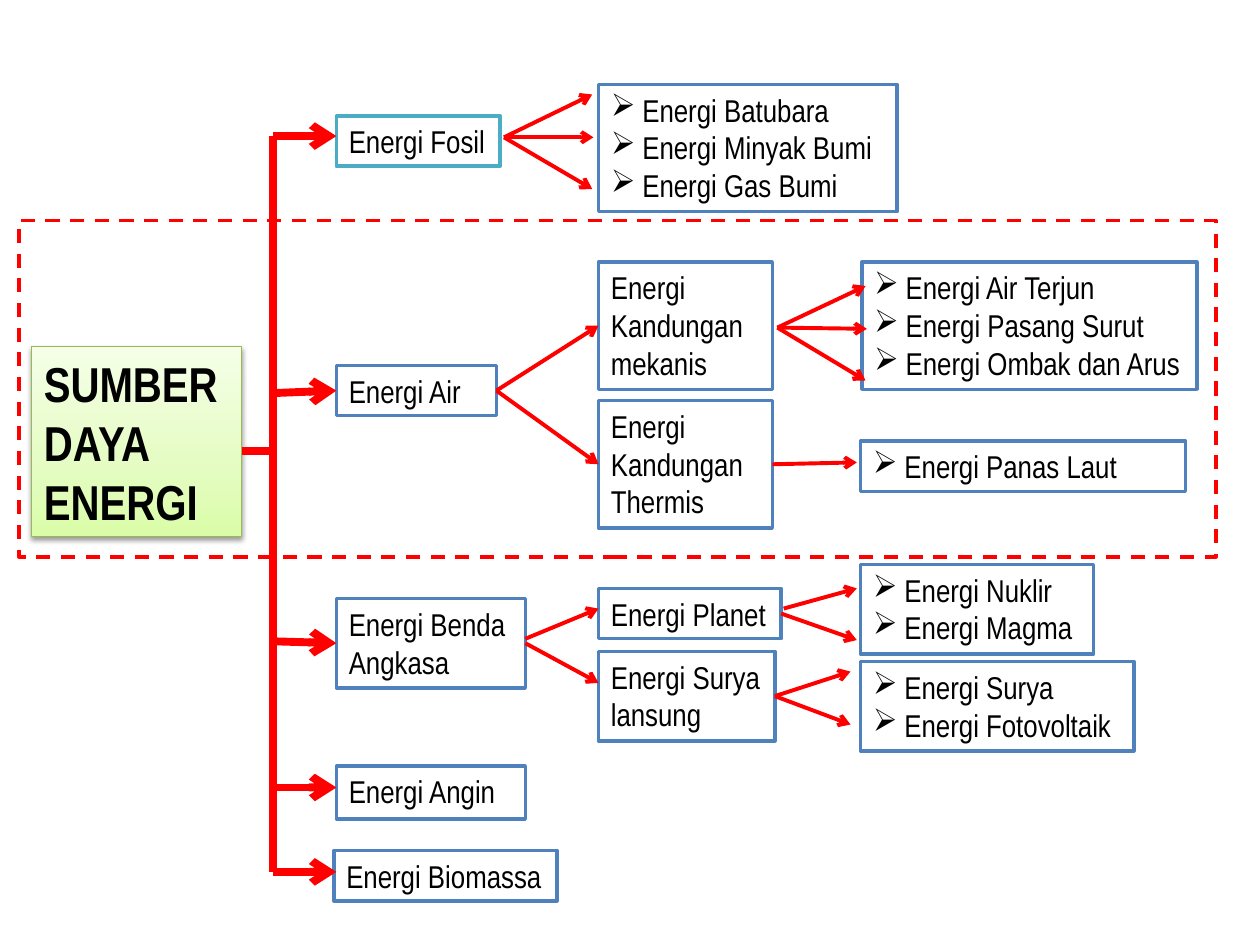
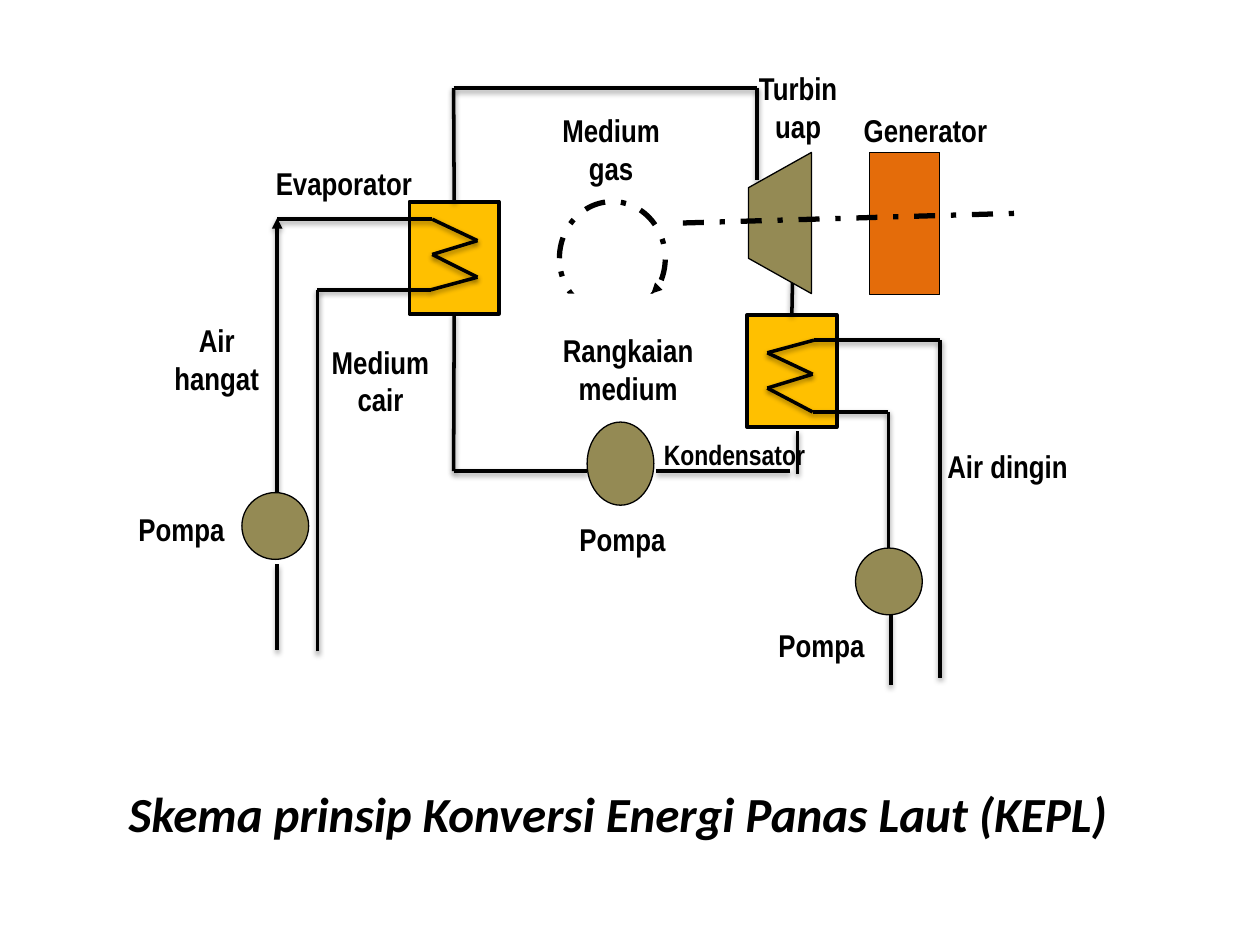
"""Builds two slides: a tree of energy sources and an ocean thermal energy scheme."""
from copy import deepcopy
from dataclasses import dataclass
from itertools import pairwise

from pptx import Presentation
from pptx import util as u
from pptx.dml.color import RGBColor
from pptx.enum import dml, shapes, text
from pptx.oxml.ns import qn
from pptx.oxml.xmlchemy import OxmlElement

COLORS = {
    "ink": "000000", "paper": "FFFFFF", "flow": "FF0000", "node": "4F81BD",
    "fossil": "4BACC6", "root_edge": "98B955", "root_low": "DAFDA7",
    "root_mid": "E4FCC2", "root_high": "F5FFE7", "exchanger": "FFC000",
    "machine": "948A54", "generator": "E46C0A",
}
RECT, OVAL = shapes.MSO_SHAPE.RECTANGLE, shapes.MSO_SHAPE.OVAL
LEFT, CENTER = text.PP_ALIGN.LEFT, text.PP_ALIGN.CENTER
BODY = {"name": "Arial Narrow", "size": u.Pt(18)}
LABEL = BODY | {"bold": True}
ROOT = LABEL | {"size": u.Pt(28)}
TITLE = {"name": "Calibri", "size": u.Pt(28), "bold": True, "italic": True}
JOIN_REACH = u.Inches(0.025)


@dataclass
class Node:
    """A framed box of the energy tree."""
    at: tuple
    words: str
    bullets: bool = False
    wrap: bool = False
    edge: str = "node"


@dataclass
class Fan:
    """Arrows that leave one point for several targets."""
    start: tuple
    targets: tuple


@dataclass
class Part:
    """An outlined piece of the plant."""
    at: tuple
    form: int
    fill: str | None
    edge: str | None = "ink"
    weight: float = 0.75


@dataclass
class Caption:
    """A bold caption of the plant."""
    at: tuple
    words: str
    align: int = CENTER
    size: int = 18


@dataclass
class Stroke:
    """The look of a line."""
    color: str = "ink"
    weight: float = 2
    tip: str | None = None
    dash: int | None = None
    shadow: bool = False


NODES = (
    Node((2.67, 0.92, 1.3, 0.4), "Energi Fosil", edge="fossil"),
    Node((2.67, 2.9, 1.27, 0.4), "Energi Air"),
    Node((2.67, 4.75, 1.5, 0.71), "Energi Benda\nAngkasa", wrap=True),
    Node((2.67, 6.08, 1.5, 0.42), "Energi Angin", wrap=True),
    Node((2.65, 6.75, 1.77, 0.4), "Energi Biomassa"),
    Node((4.75, 2.08, 1.38, 1.01), "Energi\nKandungan\nmekanis"),
    Node((4.75, 3.18, 1.38, 1.01), "Energi\nKandungan\nThermis"),
    Node((4.75, 4.67, 1.45, 0.4), "Energi Planet"),
    Node((4.75, 5.17, 1.4, 0.71), "Energi Surya\nlansung"),
    Node((4.75, 0.67, 2.37, 1.01),
         "Energi Batubara\nEnergi Minyak Bumi\nEnergi Gas Bumi", True),
    Node((6.84, 2.08, 2.66, 1.01),
         "Energi Air Terjun\nEnergi Pasang Surut\nEnergi Ombak dan Arus", True),
    Node((6.83, 3.5, 2.58, 0.4), "Energi Panas Laut", True, True),
    Node((6.83, 4.48, 1.85, 0.71), "Energi Nuklir\nEnergi Magma", True),
    Node((6.83, 5.25, 2.17, 0.71), "Energi Surya\nEnergi Fotovoltaik", True),
)
FANS = (
    Fan((4, 1.09), ((4.7, 0.75), (4.71, 1.09), (4.7, 1.5))),
    Fan((3.94, 3.1), ((4.75, 2.59), (4.75, 3.69))),
    Fan((6.17, 2.6), ((6.87, 2.27), (6.88, 2.61), (6.87, 3.02))),
    Fan((6.13, 3.68), ((6.8, 3.67),)),
    Fan((4.17, 5.1), ((4.75, 5.42),)),
    Fan((4.17, 5.07), ((4.75, 4.83),)),
    Fan((6.22, 4.86), ((6.8, 5.08),)),
    Fan((6.22, 4.83), ((6.8, 4.67),)),
    Fan((6.17, 5.52), ((6.75, 5.75),)),
    Fan((6.17, 5.5), ((6.75, 5.33),)),
)
TRUNK_X, BRANCH_X = 2.17, 2.67
BRANCH_YS = (1.08, 3.12, 5.09, 6.25, 6.92)

EXCHANGERS = (
    Part((3.25, 1.6, 0.71, 0.89), RECT, "exchanger", weight=2.25),
    Part((5.93, 2.5, 0.71, 0.89), RECT, "exchanger", weight=2.25),
)
PIPES = (
    ((3.6, 1.6), (3.6, 0.7), (6.01, 0.7), (6.01, 1.43)),
    ((3.6, 2.49), (3.6, 3.74), (4.66, 3.74)),
    ((5.21, 3.74), (6.27, 3.74)),
    ((6.33, 3.76), (6.33, 3.42)),
    ((6.29, 2.5), (6.29, 2.22)),
    ((2.52, 5.17), (2.52, 2.3), (3.42, 2.3), (3.79, 2.2), (3.43, 2.02),
     (3.79, 1.91), (3.43, 1.74), (2.2, 1.74)),
    ((7.46, 5.38), (7.46, 2.7), (6.46, 2.7), (6.09, 2.8), (6.45, 2.97),
     (6.09, 3.08), (6.45, 3.27), (7.05, 3.27), (7.05, 4.36)),
    ((7.07, 4.87), (7.07, 5.44)),
    ((2.2, 4.48), (2.2, 5.16)),
)
MACHINES = (
    Part((4.66, 3.35, 0.53, 0.66), OVAL, "machine"),
    Part((6.79, 4.35, 0.53, 0.53), OVAL, "machine"),
    Part((1.92, 3.91, 0.53, 0.53), OVAL, "machine"),
    Part((6.9, 1.21, 0.56, 1.13), RECT, "generator"),
)
TURBINE = ((6.44, 1.21), (5.94, 1.49), (5.94, 2.05), (6.44, 2.33))
CAPTIONS = (
    Caption((1.25, 2.5, 0.94, 0.71), "Air\nhangat"),
    Caption((1, 4, 0.89, 0.4), "Pompa", LEFT),
    Caption((6.08, 4.92, 0.89, 0.4), "Pompa", LEFT),
    Caption((4.5, 4.08, 0.89, 0.4), "Pompa", LEFT),
    Caption((7.42, 3.5, 1.17, 0.4), "Air dingin", LEFT),
    Caption((5.17, 3.42, 1.33, 0.37), "Kondensator", LEFT, 16),
    Caption((2.5, 2.67, 1.04, 0.71), "Medium\ncair"),
    Caption((4.33, 0.83, 1.04, 0.71), "Medium\ngas"),
    Caption((4.33, 2.58, 1.31, 0.71), "Rangkaian\nmedium"),
    Caption((5.92, 0.5, 0.83, 0.71), "Turbin\nuap"),
    Caption((6.75, 0.83, 1.19, 0.4), "Generator"),
    Caption((2.08, 1.25, 1.3, 0.4), "Evaporator"),
)


def rgb(name: str) -> RGBColor:
    """Look up a colour by its name."""
    return RGBColor.from_string(COLORS[name])


def inches(values: tuple) -> list:
    """Turn plain numbers into lengths."""
    return [u.Inches(value) for value in values]


def add_xml(parent, tag: str, **attributes):
    """Append a drawing element and return it."""
    child = OxmlElement(tag)
    for key, value in attributes.items():
        child.set(key, str(value))
    parent.append(child)
    return child


def cast_shadow(effects) -> None:
    """Put a soft shadow below into an effect list."""
    shade = add_xml(effects, "a:outerShdw", blurRad=u.Pt(3.1), dist=u.Pt(1.6),
                    dir=5400000, rotWithShape=0)
    ink = add_xml(shade, "a:srgbClr", val=COLORS["ink"])
    add_xml(ink, "a:alpha", val=38000)


def paint(shape, fill: str | None, edge: str | None, weight: float) -> None:
    """Set fill and outline, without a shadow."""
    shape.shadow.inherit = False
    for target, color in ((shape.fill, fill), (shape.line.fill, edge)):
        if color:
            target.solid()
            target.fore_color.rgb = rgb(color)
        else:
            target.background()
    if edge:
        shape.line.width = u.Pt(weight)


def write(shape, words: str, font: dict, align: int = LEFT, wrap: bool = False,
          anchor: int = text.MSO_ANCHOR.TOP, bullets: bool = False) -> None:
    """Write one paragraph for each line of words."""
    frame = shape.text_frame
    frame.text = words
    settings = {"word_wrap": wrap, "vertical_anchor": anchor,
                "auto_size": text.MSO_AUTO_SIZE.SHAPE_TO_FIT_TEXT}
    for key, value in settings.items():
        setattr(frame, key, value)
    for paragraph in frame.paragraphs:
        paragraph.alignment = align
        run_font = paragraph.runs[0].font
        for key, value in font.items():
            setattr(run_font, key, value)
        run_font.color.rgb = rgb("ink")
        if bullets:
            properties = paragraph._p.get_or_add_pPr()
            properties.set("marL", str(u.Inches(0.25)))
            properties.set("indent", str(-u.Inches(0.25)))
            add_xml(properties, "a:buChar", char="➢")


def draw_part(slide, part: Part):
    """Draw one outlined piece."""
    shape = slide.shapes.add_shape(part.form, *inches(part.at))
    paint(shape, part.fill, part.edge, part.weight)
    return shape


def draw_node(slide, node: Node):
    """Draw one box of the tree."""
    box = draw_part(slide, Part(node.at, RECT, "paper", node.edge, 2))
    write(box, node.words, BODY, wrap=node.wrap, bullets=node.bullets)
    return box


def draw_line(slide, start: tuple, end: tuple, stroke: Stroke, boxes=()) -> None:
    """Draw a straight line, joined to any box whose side middle it meets."""
    link = slide.shapes.add_connector(shapes.MSO_CONNECTOR.STRAIGHT,
                                      *inches(start + end))
    for point, join in ((start, link.begin_connect), (end, link.end_connect)):
        x, y = inches(point)
        for box in boxes:
            mid_x, mid_y = box.left + box.width // 2, box.top + box.height // 2
            sides = ((mid_x, box.top), (box.left, mid_y),
                     (mid_x, box.top + box.height), (box.left + box.width, mid_y))
            for site, (side_x, side_y) in enumerate(sides):
                if max(abs(x - side_x), abs(y - side_y)) <= JOIN_REACH:
                    join(box, site)
    link.line.color.rgb = rgb(stroke.color)
    link.line.width = u.Pt(stroke.weight)
    if stroke.dash:
        link.line.dash_style = stroke.dash
    properties = link.element.spPr
    if stroke.tip:
        add_xml(properties.find(qn("a:ln")), "a:tailEnd", type=stroke.tip)
    effects = add_xml(properties, "a:effectLst")
    if stroke.shadow:
        cast_shadow(effects)


def draw_root(slide) -> None:
    """Draw the shaded root of the tree."""
    root = draw_part(slide, Part((0.25, 2.75, 1.67, 1.51), RECT, None, "root_edge"))
    root.fill.gradient()
    root.fill.gradient_angle = 90
    properties = root.element.spPr
    stops = properties.find(qn("a:gradFill")).find(qn("a:gsLst"))
    stops.insert(1, deepcopy(stops[0]))
    shades = ((0, "root_low"), (0.35, "root_mid"), (1, "root_high"))
    for stop, (position, color) in zip(root.fill.gradient_stops, shades):
        stop.position = position
        stop.color.rgb = rgb(color)
    cast_shadow(properties.find(qn("a:effectLst")))
    write(root, "SUMBER\nDAYA\nENERGI", ROOT, wrap=True, anchor=text.MSO_ANCHOR.MIDDLE)


def build_tree(deck) -> None:
    """Build the tree of energy sources."""
    slide = deck.slides.add_slide(deck.slide_layouts[6])
    draw_root(slide)
    boxes = [draw_node(slide, node) for node in NODES]
    trunk, branch = Stroke("flow", 4.5), Stroke("flow", 4.5, "arrow")
    draw_line(slide, (1.92, 3.58), (TRUNK_X, 3.58), trunk)
    draw_line(slide, (TRUNK_X, BRANCH_YS[0]), (TRUNK_X, BRANCH_YS[-1]), trunk)
    for y in BRANCH_YS:
        draw_line(slide, (TRUNK_X, y), (BRANCH_X, y), branch, boxes)
    for fan in FANS:
        for target in fan.targets:
            draw_line(slide, fan.start, target, Stroke("flow", 2.25, "arrow"), boxes)
    focus = draw_part(slide, Part((0.15, 1.75, 9.5, 2.67), RECT, None, "flow", 2))
    focus.line.dash_style = dml.MSO_LINE.DASH


def build_plant(deck) -> None:
    """Build the scheme of the ocean thermal plant."""
    slide = deck.slides.add_slide(deck.slide_layouts[5])
    title = slide.shapes.title
    title.left, title.top, title.width, title.height = inches((0.92, 6.17, 8.06, 0.57))
    write(title, "Skema prinsip Konversi Energi Panas Laut (KEPL)", TITLE)
    exchangers = [draw_part(slide, part) for part in EXCHANGERS]
    for pipe in PIPES:
        for start, end in pairwise(pipe):
            draw_line(slide, start, end, Stroke(shadow=True), exchangers)
    draw_line(slide, (2.2, 3.92), (2.2, 1.73), Stroke(tip="triangle", shadow=True))
    for part in MACHINES:
        draw_part(slide, part)
    corners = [tuple(inches(corner)) for corner in TURBINE]
    outline = slide.shapes.build_freeform(*corners[0])
    outline.add_line_segments(corners[1:], close=True)
    paint(outline.convert_to_shape(), "machine", "ink", 0.75)
    draw_line(slide, (5.42, 1.77), (8.17, 1.69),
              Stroke(weight=3, dash=dml.MSO_LINE.DASH_DOT))
    cycle = draw_part(slide, Part((4.44, 1.6, 0.84, 0.9), OVAL, None, weight=3))
    cycle.line.dash_style = dml.MSO_LINE.DASH_DOT
    draw_part(slide, Part((4.38, 2.33, 0.95, 0.23), RECT, "paper", None))
    draw_line(slide, (5.22, 2.28), (5.17, 2.33), Stroke(weight=0.75, tip="triangle"))
    for caption in CAPTIONS:
        label = slide.shapes.add_textbox(*inches(caption.at))
        write(label, caption.words, LABEL | {"size": u.Pt(caption.size)}, caption.align)


def main() -> None:
    """Build and save the deck."""
    deck = Presentation()
    deck.slide_width, deck.slide_height = inches((10, 7.5))
    build_tree(deck)
    build_plant(deck)
    deck.save("out.pptx")


if __name__ == "__main__":
    main()
